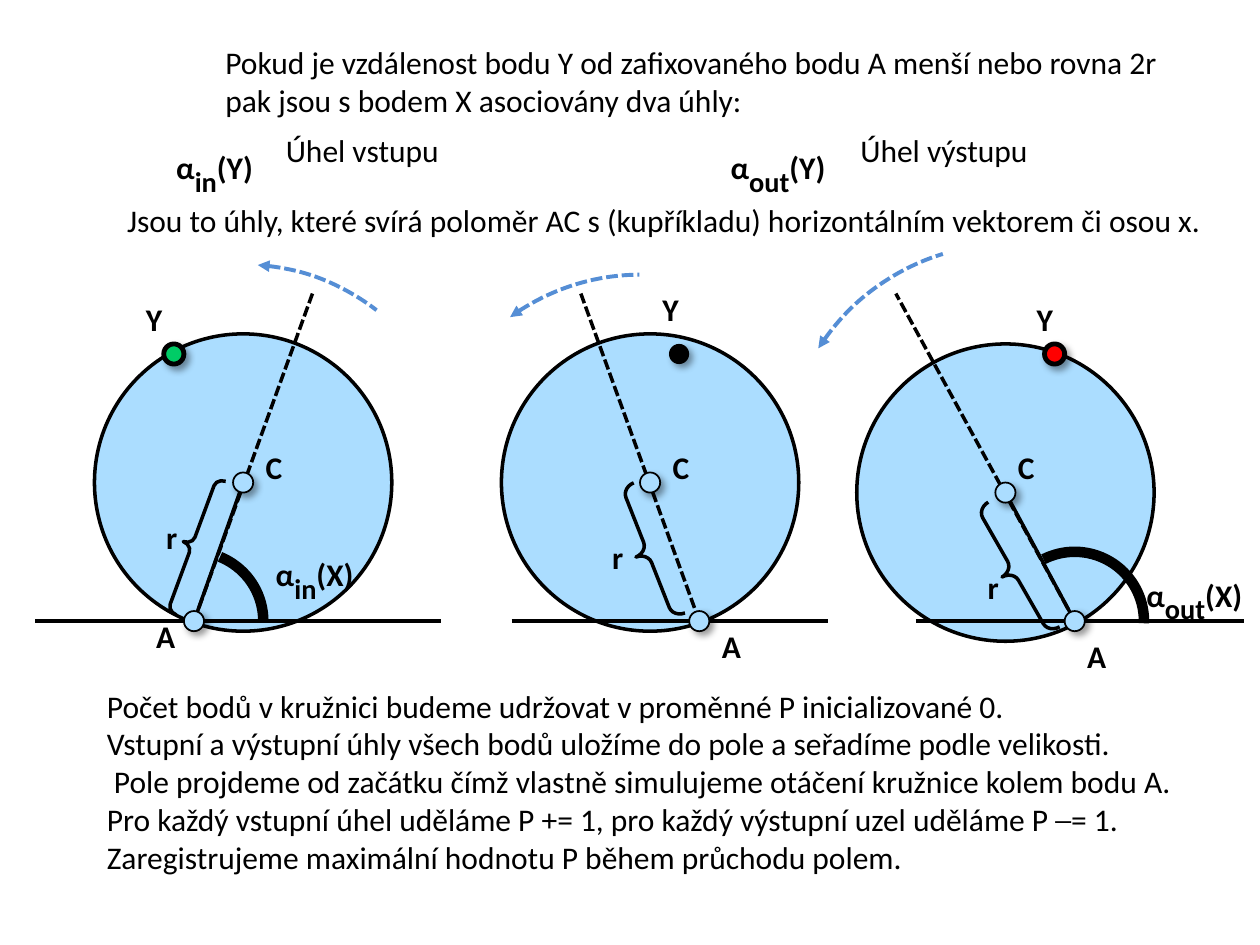
from dataclasses import dataclass
from typing import Optional

import lxml.etree
import pptx
import pptx.dml.color
import pptx.enum.dml
import pptx.enum.shapes
import pptx.enum.text
import pptx.oxml.ns
import pptx.util

Inches = pptx.util.Inches
Pt = pptx.util.Pt
qn = pptx.oxml.ns.qn
SHAPE = pptx.enum.shapes.MSO_SHAPE

COLOURS = {
    "ink": "000000",
    "disc": "ABDDFF",
    "turn": "558ED5",
    "enter": "00CC66",
    "leave": "FF0000",
}
RADIUS = 1.18
DOT_RADIUS = 0.08
ANGLE_RADIUS = 0.55
GROUND = 4.93
POINT_HEIGHT = 2.81
TIP_HEIGHT = 2.33

Point = tuple[float, float]
Area = tuple[float, float, float, float]


@dataclass
class Stroke:
    colour: str = "ink"
    width: float = 2
    dashed: bool = False
    arrow: bool = False


@dataclass
class Label:
    text: str
    at: Point
    size: Point
    bold: bool = True
    subscript: str = ""
    tail: str = ""


@dataclass
class Turn:
    area: Area
    start: float
    end: float


@dataclass
class Brace:
    area: Area
    rotation: float


@dataclass
class Panel:
    centre: Point
    anchor: float
    tip: float
    point: float
    point_colour: str
    point_stroke: Optional[Stroke]
    ground: Point
    brace: Brace
    turn: Turn
    labels: dict[str, Point]
    angle: Optional[Point] = None


PANELS = [
    Panel((1.93, 3.83), 1.54, 2.48, 1.38, "enter", Stroke(width=2.75), (0.28, 3.5),
          Brace((1.45, 3.76, 0.15, 1.13), 20.3),
          Turn((0.2, 2.1, 3.46, 3.46), 273.87, 307.76),
          {"C": (2.01, 3.51), "A": (1.14, 4.85), "Y": (1.06, 2.33), "r": (1.22, 4.06)},
          (292.04, 359.86)),
    Panel((5.16, 3.83), 5.55, 4.61, 5.39, "ink", None, (4.06, 6.57),
          Brace((5.04, 3.83, 0.2, 1.11), 338.5),
          Turn((3.27, 2.18, 3.62, 3.78), 236.4, 269.86),
          {"C": (5.24, 3.51), "A": (5.63, 4.93), "Y": (5.16, 2.25), "r": (4.76, 4.22)}),
    Panel((7.98, 3.91), 8.53, 7.11, 8.37, "leave", Stroke(width=2.75), (7.27, 9.87),
          Brace((7.94, 3.96, 0.2, 1.14), 330.2),
          Turn((6.18, 1.94, 3.62, 3.78), 215.47, 254.4),
          {"C": (7.98, 3.51), "A": (8.53, 5.01), "Y": (8.13, 2.33), "r": (7.74, 4.46)},
          (243.24, 1.77)),
]

LABEL_WIDTHS = {"C": 0.34, "A": 0.35, "Y": 0.34, "r": 0.29}

LABELS = [
    Label("α", (2.09, 4.22), (0.86, 0.42), True, "in", "(X)"),
    Label("α", (9, 4.38), (1.03, 0.42), True, "out", "(X)"),
    Label("α", (1.3, 0.99), (0.86, 0.42), True, "in", "(Y)"),
    Label("α", (5.7, 0.99), (1.03, 0.42), True, "out", "(Y)"),
    Label("Úhel vstupu", (2.17, 0.99), (1.43, 0.4), False),
    Label("Úhel výstupu", (6.73, 0.99), (1.54, 0.4), False),
    Label("Pokud je vzdálenost bodu Y od zafixovaného bodu A menší nebo rovna 2r\n"
          "pak jsou s bodem X asociovány dva úhly:", (1.69, 0.29), (7.96, 0.71), False),
    Label("Jsou to úhly, které svírá poloměr AC s (kupříkladu) horizontálním vektorem či osou x.",
          (0.91, 1.55), (8.78, 0.4), False),
    Label("Počet bodů v kružnici budeme udržovat v proměnné P inicializované 0.\n"
          "Vstupní a výstupní úhly všech bodů uložíme do pole a seřadíme podle velikosti.\n"
          " Pole projdeme od začátku čímž vlastně simulujeme otáčení kružnice kolem bodu A.\n"
          "Pro každý vstupní úhel uděláme P += 1, pro každý výstupní uzel uděláme P ─= 1.\n"
          "Zaregistrujeme maximální hodnotu P během průchodu polem.",
          (0.75, 5.4), (8.75, 1.62), False),
]


def rgb(name: str) -> pptx.dml.color.RGBColor:
    return pptx.dml.color.RGBColor.from_string(COLOURS[name])


def apply_stroke(shape, stroke: Optional[Stroke]) -> None:
    if stroke is None:
        shape.line.fill.background()
        return
    shape.line.color.rgb = rgb(stroke.colour)
    shape.line.width = Pt(stroke.width)
    if stroke.dashed:
        shape.line.dash_style = pptx.enum.dml.MSO_LINE.SQUARE_DOT
    if stroke.arrow:
        outline = shape._element.spPr.find(qn("a:ln"))
        lxml.etree.SubElement(outline, qn("a:headEnd"), type="triangle")


def draw_shape(page, kind, area: Area, stroke: Optional[Stroke], fill: str = ""):
    shape = page.shapes.add_shape(kind, *map(Inches, area))
    shape.shadow.inherit = False
    if fill:
        shape.fill.solid()
        shape.fill.fore_color.rgb = rgb(fill)
    else:
        shape.fill.background()
    apply_stroke(shape, stroke)
    return shape


def draw_circle(page, centre: Point, radius: float, stroke: Optional[Stroke], fill: str):
    x, y = centre
    area = (x - radius, y - radius, 2 * radius, 2 * radius)
    return draw_shape(page, SHAPE.OVAL, area, stroke, fill)


def draw_dot(page, centre: Point, stroke: Optional[Stroke], fill: str) -> None:
    dot = draw_circle(page, centre, DOT_RADIUS, stroke, fill)
    effects = dot._element.spPr.find(qn("a:effectLst"))
    shadow = lxml.etree.SubElement(effects, qn("a:outerShdw"), blurRad=str(Pt(4)),
                                   dist=str(Pt(3)), dir="2700000", rotWithShape="0")
    colour = lxml.etree.SubElement(shadow, qn("a:srgbClr"), val=COLOURS["ink"])
    lxml.etree.SubElement(colour, qn("a:alpha"), val="40000")


def draw_line(page, start: Point, end: Point, stroke: Stroke) -> None:
    straight = pptx.enum.shapes.MSO_CONNECTOR.STRAIGHT
    line = page.shapes.add_connector(straight, *map(Inches, start + end))
    apply_stroke(line, stroke)
    lxml.etree.SubElement(line._element.spPr, qn("a:effectLst"))


def draw_arc(page, area: Area, start: float, end: float, stroke: Stroke) -> None:
    arc = draw_shape(page, SHAPE.ARC, area, stroke)
    for index, degrees in enumerate((start, end)):
        arc.adjustments[index] = degrees * 0.6


def draw_brace(page, brace: Brace) -> None:
    shape = draw_shape(page, SHAPE.LEFT_BRACE, brace.area, Stroke())
    shape.adjustments[0] = 0.43
    shape.rotation = brace.rotation


def add_span(para, text: str, size: float, bold: bool):
    span = para.add_run()
    span.text = text
    for name, value in {"name": "Calibri", "size": Pt(size), "bold": bold}.items():
        setattr(span.font, name, value)
    span.font.color.rgb = rgb("ink")
    return span


def draw_label(page, label: Label) -> None:
    box = page.shapes.add_textbox(*map(Inches, label.at + label.size))
    frame = box.text_frame
    frame.word_wrap = False
    frame.auto_size = pptx.enum.text.MSO_AUTO_SIZE.SHAPE_TO_FIT_TEXT
    for index, text in enumerate(label.text.split("\n")):
        para = frame.add_paragraph() if index else frame.paragraphs[0]
        add_span(para, text, 18, label.bold)
    if label.subscript:
        lowered = add_span(para, label.subscript, 28, label.bold)
        lowered.font._element.set("baseline", "-25000")
        add_span(para, label.tail, 18, label.bold)


def draw_panel(page, panel: Panel) -> None:
    anchor = (panel.anchor, GROUND)
    draw_circle(page, panel.centre, RADIUS, Stroke(), "disc")
    draw_line(page, (panel.ground[0], GROUND), (panel.ground[1], GROUND), Stroke())
    draw_line(page, anchor, (panel.tip, TIP_HEIGHT), Stroke(dashed=True))
    if panel.angle:
        draw_line(page, anchor, panel.centre, Stroke())
        area = (panel.anchor - ANGLE_RADIUS, GROUND - ANGLE_RADIUS,
                2 * ANGLE_RADIUS, 2 * ANGLE_RADIUS)
        draw_arc(page, area, *panel.angle, Stroke(width=6))
    for centre in (panel.centre, anchor):
        draw_dot(page, centre, Stroke(width=1), "disc")
    draw_dot(page, (panel.point, POINT_HEIGHT), panel.point_stroke, panel.point_colour)
    draw_brace(page, panel.brace)
    draw_arc(page, panel.turn.area, panel.turn.start, panel.turn.end,
             Stroke("turn", 2.25, True, True))
    for text, at in panel.labels.items():
        draw_label(page, Label(text, at, (LABEL_WIDTHS[text], 0.4)))


def main() -> None:
    deck = pptx.Presentation()
    deck.slide_width, deck.slide_height = Inches(10), Inches(7.5)
    page = deck.slides.add_slide(deck.slide_layouts[6])
    for panel in PANELS:
        draw_panel(page, panel)
    for label in LABELS:
        draw_label(page, label)
    deck.save("out.pptx")


if __name__ == "__main__":
    main()
